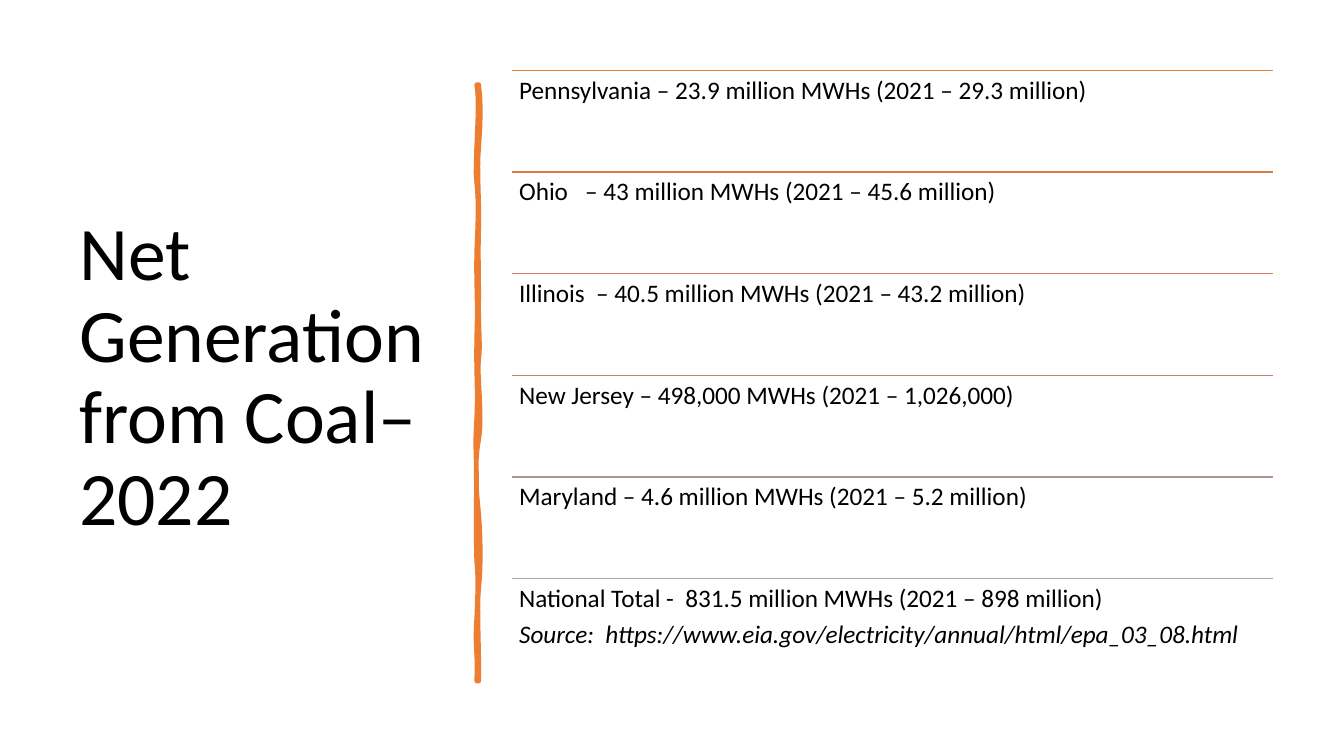
from lxml import etree
from pptx import Presentation
from pptx.dml.color import RGBColor
from pptx.enum import shapes, text
from pptx.oxml import ns
from pptx.util import Pt

COLORS = {"text": "000000", "bar": "ED7D31"}
FONT = "Calibri"

ROWS = [
    ("ED7D31", ["Pennsylvania – 23.9 million MWHs (2021 – 29.3 million)"]),
    ("DC7A4B", ["Ohio   – 43 million MWHs (2021 – 45.6 million)"]),
    ("CC7D64", ["Illinois  – 40.5 million MWHs (2021 – 43.2 million)"]),
    ("BD867B", ["New Jersey – 498,000 MWHs (2021 – 1,026,000)"]),
    ("B09391", ["Maryland – 4.6 million MWHs (2021 – 5.2 million)"]),
    ("A5A5A5", ["National Total -  831.5 million MWHs (2021 – 898 million)",
                "Source:  https://www.eia.gov/electricity/annual/html/epa_03_08.html"]),
]
ROW_LEFT, ROW_TOP, ROW_WIDTH, ROW_PITCH = 365.8, 50.4, 543.6, 72.58

# Each curve of the bar: two control points, then the y where it meets the edge
BAR_TOP, BAR_RIGHT, BAR_LEFT = 60.5, 342, 340.5
RIGHT_CURVES = [
    (343.5, 73.5, 343.5, 85.5, 105), (340.5, 124.5, 342.5, 140.5, 162.5),
    (341.5, 185, 342, 188.5, 211.5), (341.5, 234, 343.5, 246, 256.5),
    (340.5, 266.5, 345, 298, 314), (339, 329, 340, 348.5, 367),
    (343.5, 386, 343.5, 406, 420.5), (340.5, 434, 342.5, 468, 486.5),
]
LEFT_CURVES = [
    (341.5, 465, 339, 463.5, 441.5), (341.5, 420, 341.5, 410.5, 401),
    (340, 391.5, 340, 356.5, 343.5), (340.5, 330.5, 339, 320.5, 299),
    (341.5, 278, 340, 268.5, 241), (341.5, 214.5, 340, 202.5, 180),
    (341.5, 157, 342, 144, 130.5), (338.5, 117.5, 343.5, 75, 60.5),
]
STEPS = 8


def rgb(value):
    return RGBColor.from_string(value)


def add_text(box, lines, size, anchor, inset_x, inset_y, after=0):
    """Add a wrapped text box, one paragraph per line, and return its paragraphs."""
    tf = s.shapes.add_textbox(*[Pt(v) for v in box]).text_frame
    tf.word_wrap = True
    tf.vertical_anchor = anchor
    tf.margin_left = tf.margin_right = Pt(inset_x)
    tf.margin_top = tf.margin_bottom = Pt(inset_y)
    tf.text = "\n".join(lines)
    for p in tf.paragraphs:
        p.line_spacing = 0.9
        p.space_after = Pt(after)
        p.font.name = FONT
        p.font.size = Pt(size)
        p.font.color.rgb = rgb(COLORS["text"])
    return tf.paragraphs


prs = Presentation()
prs.slide_width, prs.slide_height = Pt(960), Pt(540)
s = prs.slides.add_slide(prs.slide_layouts[6])

add_text((49.7, 50.4, 269.3, 440), ["Net Generation from Coal– 2022"],
         54, text.MSO_ANCHOR.MIDDLE, 7.2, 3.6)

# Hand-drawn vertical bar
outline = []
y0 = BAR_TOP
for edge, curves in ((BAR_RIGHT, RIGHT_CURVES), (BAR_LEFT, LEFT_CURVES)):
    outline.append((Pt(edge), Pt(y0)))
    for x1, y1, x2, y2, y3 in curves:
        for step in range(1, STEPS + 1):
            t = step / STEPS
            a, b, c, d = (1 - t) ** 3, 3 * t * (1 - t) ** 2, 3 * t * t * (1 - t), t ** 3
            outline.append((Pt(edge * (a + d) + x1 * b + x2 * c),
                            Pt(y0 * a + y1 * b + y2 * c + y3 * d)))
        y0 = y3
builder = s.shapes.build_freeform(*outline[0])
builder.add_line_segments(outline[1:], close=True)
bar = builder.convert_to_shape()
bar.shadow.inherit = False
bar.fill.solid()
bar.fill.fore_color.rgb = rgb(COLORS["bar"])
bar.line.color.rgb = rgb(COLORS["bar"])
bar.line.width = Pt(3.25)
etree.SubElement(bar.line._get_or_add_ln(), ns.qn("a:round"))

# States, each under its own rule
for i, (color, lines) in enumerate(ROWS):
    top = ROW_TOP + i * ROW_PITCH
    rule = s.shapes.add_connector(shapes.MSO_CONNECTOR.STRAIGHT, Pt(ROW_LEFT), Pt(top),
                                  Pt(ROW_LEFT + ROW_WIDTH), Pt(top))
    rule.line.color.rgb = rgb(color)
    rule.line.width = Pt(1)
    etree.SubElement(rule._element.spPr, ns.qn("a:effectLst"))
    paragraphs = add_text((ROW_LEFT, top, ROW_WIDTH, ROW_PITCH), lines,
                          18, text.MSO_ANCHOR.TOP, 5, 5, after=6.3)
    for source in paragraphs[1:]:
        source.font.italic = True

prs.save("out.pptx")
